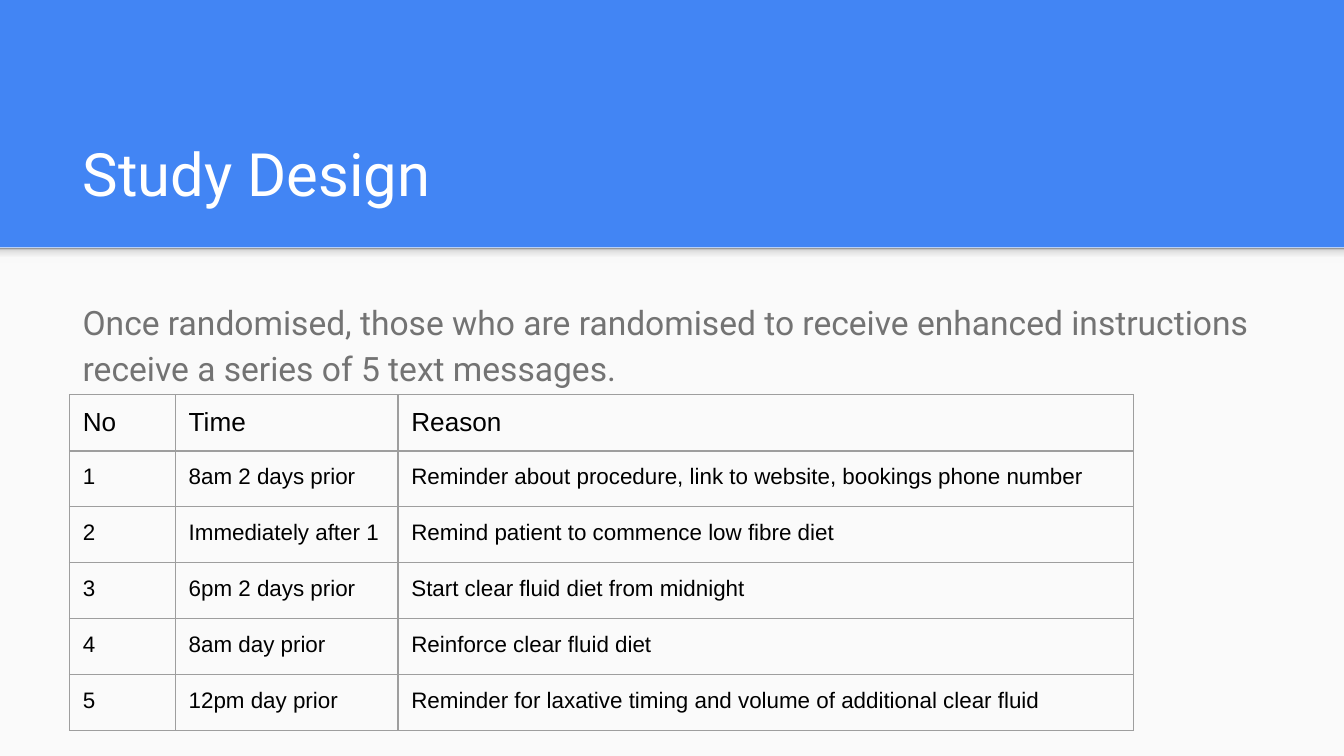
"""Build the Study Design slide with its text message schedule."""
from copy import deepcopy
from typing import NamedTuple

from lxml.etree import SubElement
from pptx import Presentation
from pptx.dml.color import RGBColor
from pptx.enum.shapes import MSO_SHAPE
from pptx.enum.text import MSO_ANCHOR, MSO_AUTO_SIZE, PP_ALIGN
from pptx.oxml.ns import qn
from pptx.util import Pt


class Area(NamedTuple):
    left: float
    top: float
    width: float
    height: float

    def lengths(self) -> list:
        return [Pt(value) for value in self]


class TextStyle(NamedTuple):
    font: str
    size: float
    color: str


class Message(NamedTuple):
    number: str
    time: str
    reason: str


class Stop(NamedTuple):
    position: float
    color: str


PAGE_WIDTH, PAGE_HEIGHT = 720, 405
BAND_HEIGHT = 132.6
INSET = 7.2
ROW_HEIGHT = 30
COLUMN_WIDTHS = (56.7, 119.3, 394.2)
BORDER_COLOR = "9E9E9E"
TITLE_STYLE = TextStyle("Roboto", 32, "FFFFFF")
BODY_STYLE = TextStyle("Roboto", 18, "737373")
HEADING_STYLE = TextStyle("Arial", 14, "000000")
CELL_STYLE = TextStyle("Arial", 12, "000000")
SHADOW_STOPS = (Stop(0, "F9F9F9"), Stop(0.36, "F9F9F9"), Stop(0.8, "DEDEDE"), Stop(1, "999999"))
INTRODUCTION = (
    "Once randomised, those who are randomised to receive enhanced instructions "
    "receive a series of 5 text messages."
)
SCHEDULE = (
    Message("No", "Time", "Reason"),
    Message("1", "8am 2 days prior", "Reminder about procedure, link to website, bookings phone number"),
    Message("2", "Immediately after 1", "Remind patient to commence low fibre diet"),
    Message("3", "6pm 2 days prior", "Start clear fluid diet from midnight"),
    Message("4", "8am day prior", "Reinforce clear fluid diet"),
    Message("5", "12pm day prior", "Reminder for laxative timing and volume of additional clear fluid"),
)


def color(value: str) -> RGBColor:
    return RGBColor.from_string(value)


def set_margins(target) -> None:
    target.margin_left = target.margin_right = Pt(INSET)
    target.margin_top = target.margin_bottom = Pt(INSET)


def write(frame, text: str, style: TextStyle, spacing: float = 1.0) -> None:
    frame.text = text
    para = frame.paragraphs[0]
    para.alignment = PP_ALIGN.LEFT
    para.line_spacing = spacing
    for span in para.runs:
        span.font.name = style.font
        span.font.size = Pt(style.size)
        span.font.color.rgb = color(style.color)


def format_frame(frame, anchor) -> None:
    set_margins(frame)
    frame.word_wrap = True
    frame.auto_size = MSO_AUTO_SIZE.NONE
    frame.vertical_anchor = anchor


def add_panel(page, area: Area):
    panel = page.shapes.add_shape(MSO_SHAPE.RECTANGLE, *area.lengths())
    panel.shadow.inherit = False
    panel.line.fill.background()
    return panel


def add_background(page) -> None:
    page.background.fill.solid()
    page.background.fill.fore_color.rgb = color("4285F4")
    panel = add_panel(page, Area(0, BAND_HEIGHT, PAGE_WIDTH, PAGE_HEIGHT - BAND_HEIGHT))
    panel.fill.solid()
    panel.fill.fore_color.rgb = color("FAFAFA")

    shadow = add_panel(page, Area(0, BAND_HEIGHT, PAGE_WIDTH, 8.6))
    shadow.fill.gradient()
    shadow.fill.gradient_angle = 90
    stop_list = next(shadow.element.iter(qn("a:gsLst")))
    for extra in [deepcopy(stop) for stop in stop_list]:
        stop_list.append(extra)
    for stop, wanted in zip(shadow.fill.gradient_stops, SHADOW_STOPS):
        stop.position = wanted.position
        stop.color.rgb = color(wanted.color)


def add_title(page, text: str, area: Area) -> None:
    title = page.shapes.title
    title.left, title.top, title.width, title.height = area.lengths()
    format_frame(title.text_frame, MSO_ANCHOR.BOTTOM)
    write(title.text_frame, text, TITLE_STYLE)
    page.shapes._spTree.append(title.element)


def add_body(page, text: str, area: Area) -> None:
    box = page.shapes.add_textbox(*area.lengths())
    format_frame(box.text_frame, MSO_ANCHOR.TOP)
    write(box.text_frame, text, BODY_STYLE, 1.15)


def add_borders(cell) -> None:
    properties = cell._tc.get_or_add_tcPr()
    for side in ("a:lnL", "a:lnR", "a:lnT", "a:lnB"):
        line = SubElement(properties, qn(side), w=str(Pt(0.75)))
        fill = SubElement(line, qn("a:solidFill"))
        SubElement(fill, qn("a:srgbClr"), val=BORDER_COLOR)


def add_schedule(page, left: float, top: float) -> None:
    area = Area(left, top, sum(COLUMN_WIDTHS), ROW_HEIGHT * len(SCHEDULE))
    table = page.shapes.add_table(len(SCHEDULE), len(COLUMN_WIDTHS), *area.lengths()).table
    table.first_row = table.horz_banding = False
    for column, width in zip(table.columns, COLUMN_WIDTHS):
        column.width = Pt(width)
    for row_index, (row, message) in enumerate(zip(table.rows, SCHEDULE)):
        row.height = Pt(ROW_HEIGHT)
        style = CELL_STYLE if row_index else HEADING_STYLE
        for cell, text in zip(row.cells, message):
            set_margins(cell)
            add_borders(cell)
            cell.fill.background()
            write(cell.text_frame, text, style)


def main() -> None:
    deck = Presentation()
    deck.slide_width, deck.slide_height = Pt(PAGE_WIDTH), Pt(PAGE_HEIGHT)
    page = deck.slides.add_slide(deck.slide_layouts[5])
    add_background(page)
    add_title(page, "Study Design", Area(37.2, 58.3, 647.3, 60.5))
    add_body(page, INTRODUCTION, Area(37.2, 151.2, 647.3, 213.1))
    add_schedule(page, 37.2, 211.4)
    deck.save("out.pptx")


if __name__ == "__main__":
    main()
